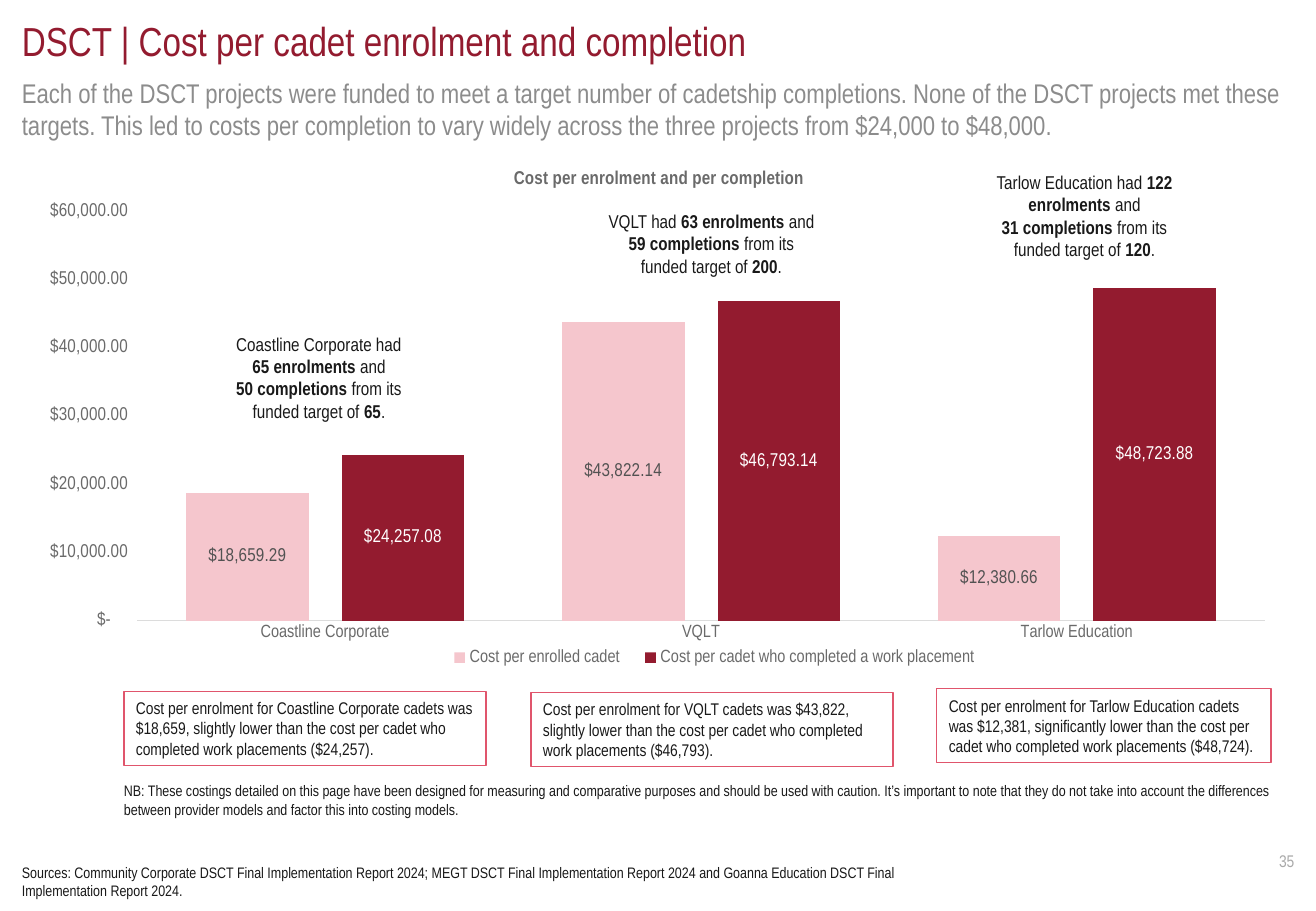
"""Build the slide on cost per cadet enrolment and completion."""
from lxml import etree
from pptx import Presentation
from pptx.chart.data import CategoryChartData
from pptx.dml.color import RGBColor
from pptx.enum.chart import XL_CHART_TYPE, XL_LABEL_POSITION, XL_LEGEND_POSITION, XL_TICK_MARK
from pptx.enum.shapes import MSO_SHAPE
from pptx.enum.text import MSO_ANCHOR, PP_ALIGN
from pptx.oxml.ns import qn
from pptx.util import Inches, Pt

COLUMNS = XL_CHART_TYPE.COLUMN_CLUSTERED
CENTRED_LABEL = XL_LABEL_POSITION.CENTER
LEGEND_BOTTOM = XL_LEGEND_POSITION.BOTTOM
NO_TICK = XL_TICK_MARK.NONE
RECTANGLE = MSO_SHAPE.RECTANGLE
TOP, MIDDLE = MSO_ANCHOR.TOP, MSO_ANCHOR.MIDDLE
LEFT, CENTER, RIGHT = PP_ALIGN.LEFT, PP_ALIGN.CENTER, PP_ALIGN.RIGHT

FONT = "Arial Narrow"
RED, PINK, BORDER = "931B2F", "F5C6CD", "E0556C"
INK, GREY, LABEL_GREY = "191919", "6A6A6A", "525252"
SUBTITLE_GREY, NUMBER_GREY, AXIS_GREY = "8C8C8C", "A9A9A9", "DCDCDC"
MONEY = '_("$"* #,##0.00_);_("$"* \\(#,##0.00\\);_("$"* "-"??_);_(@_)'
MARGIN, CONTENT_WIDTH = 0.18, 10.47
INDENT = 1.02


def style_font(font, size, color, bold=False):
    font.name, font.size, font.bold = FONT, Pt(size), bold
    font.color.rgb = RGBColor.from_string(color)


def write(shape, box, lines, size, color, align=LEFT, anchor=MIDDLE, insets=(0.1, 0.05)):
    """Place a shape and fill it; text between asterisks is bold."""
    shape.left, shape.top, shape.width, shape.height = map(Inches, box)
    frame = shape.text_frame
    frame.word_wrap = True
    frame.vertical_anchor = anchor
    frame.margin_left = frame.margin_right = Inches(insets[0])
    frame.margin_top = frame.margin_bottom = Inches(insets[1])
    for number, line in enumerate(lines):
        paragraph = frame.add_paragraph() if number else frame.paragraphs[0]
        paragraph.alignment = align
        paragraph.space_before = Pt(0)
        for part, text in enumerate(line.split("*")):
            if text:
                run = paragraph.add_run()
                run.text = text
                style_font(run.font, size, color, part % 2 == 1)


presentation = Presentation()
presentation.slide_width, presentation.slide_height = Inches(10.83), Inches(7.5)
slide = presentation.slides.add_slide(presentation.slide_layouts[1])
shapes = slide.shapes

write(shapes.title, (MARGIN, 0.13, CONTENT_WIDTH, 0.4),
      ["DSCT | Cost per cadet enrolment and completion"], 24, RED, anchor=TOP, insets=(0, 0))
subtitle = slide.placeholders[1]
properties = subtitle.text_frame.paragraphs[0]._p.get_or_add_pPr()
properties.set("marL", "0")
properties.set("indent", "0")
etree.SubElement(properties, qn("a:buNone"))
write(subtitle, (MARGIN, 0.63, CONTENT_WIDTH, 0.54),
      ["Each of the DSCT projects were funded to meet a target number of cadetship completions. "
       "None of the DSCT projects met these targets. This led to costs per completion to vary "
       "widely across the three projects from $24,000 to $48,000."],
      16, SUBTITLE_GREY, anchor=TOP, insets=(0, 0))

data = CategoryChartData(number_format=MONEY)
data.categories = ["Coastline Corporate", "VQLT", "Tarlow Education"]
data.add_series("Cost per enrolled cadet", (18659.29, 43822.14, 12380.66))
data.add_series("Cost per cadet who completed a work placement", (24257.08, 46793.14, 48723.88))
chart_width, chart_height = 10.45, 4.46
chart = shapes.add_chart(COLUMNS, Inches(MARGIN), Inches(1.21),
                         Inches(chart_width), Inches(chart_height), data).chart
style_font(chart.font, 11, INK)
chart.has_title = True
chart_title = chart.chart_title.text_frame
chart_title.text = "Cost per enrolment and per completion"
style_font(chart_title.paragraphs[0].runs[0].font, 11, GREY, True)
chart.has_legend = True
chart.legend.position = LEGEND_BOTTOM
chart.legend.include_in_layout = False
style_font(chart.legend.font, 10.5, GREY)

plot = chart.plots[0]
plot.gap_width, plot.overlap, plot.vary_by_categories = 80, -27, False
for series, fill, label_color in zip(plot.series, (PINK, RED), (LABEL_GREY, "FFFFFF")):
    series.format.fill.solid()
    series.format.fill.fore_color.rgb = RGBColor.from_string(fill)
    labels = series.data_labels
    labels.show_value = True
    labels.position = CENTRED_LABEL
    labels.number_format, labels.number_format_is_linked = MONEY, False
    style_font(labels.font, 11, label_color)

category_axis, value_axis = chart.category_axis, chart.value_axis
for axis, size in ((category_axis, 10.5), (value_axis, 11)):
    axis.major_tick_mark = axis.minor_tick_mark = NO_TICK
    axis.has_major_gridlines = False
    style_font(axis.tick_labels.font, size, GREY)
category_axis.format.line.color.rgb = RGBColor.from_string(AXIS_GREY)
category_axis.format.line.width = Pt(0.75)
value_axis.format.line.fill.background()
value_axis.minimum_scale, value_axis.maximum_scale, value_axis.major_unit = 0, 60000, 10000
value_axis.tick_labels.number_format = MONEY
value_axis.tick_labels.number_format_is_linked = False

chart_parts = [
    (chart._chartSpace.chart.plotArea, 0, (0.95, 0.53, 9.28, 3.37)),
    (chart.legend._element, 1, (3.4, 4.08, 4.6, 0.25)),
    (chart.chart_title._element, 1, (4.02, 0.15)),
]
for element, position, box in chart_parts:
    for old_layout in element.findall(qn("c:layout")):
        element.remove(old_layout)
    layout = etree.Element(qn("c:layout"))
    manual = etree.SubElement(layout, qn("c:manualLayout"))
    settings = [("layoutTarget", "inner")] if position == 0 else []
    settings += [("xMode", "edge"), ("yMode", "edge")]
    spans = (chart_width, chart_height) * 2
    settings += [(key, f"{length / span:.4f}") for key, length, span in zip("xywh", box, spans)]
    for key, value in settings:
        etree.SubElement(manual, qn(f"c:{key}")).set("val", value)
    element.insert(position, layout)

callouts = [
    (1.55, 2.69, 0.84, ["Coastline Corporate had", "*65 enrolments* and",
                        "*50 completions* from its", "funded target of *65*."]),
    (4.78, 1.68, 0.66, ["VQLT had *63 enrolments* and", "*59 completions* from its",
                        "funded target of *200*."]),
    (7.85, 1.36, 0.84, ["Tarlow Education had *122 enrolments* and",
                        "*31 completions* from its", "funded target of *120*."]),
]
for left, top, height, lines in callouts:
    write(shapes.add_textbox(0, 0, 0, 0), (left, top, 2.15, height), lines, 11, INK, CENTER, TOP)

findings = [
    (INDENT, 5.69, 2.98, "Coastline Corporate cadets was $18,659, slightly", "$24,257"),
    (4.37, 5.7, 2.98, "VQLT cadets was $43,822, slightly", "$46,793"),
    (7.71, 5.67, 2.75, "Tarlow Education cadets was $12,381, significantly", "$48,724"),
]
for left, top, width, finding, completion_cost in findings:
    box = shapes.add_shape(RECTANGLE, 0, 0, 0, 0)
    box.shadow.inherit = False
    box.fill.background()
    box.line.color.rgb = RGBColor.from_string(BORDER)
    box.line.width = Pt(0.75)
    write(box, (left, top, width, 0.61),
          [f"Cost per enrolment for {finding} lower than the cost per cadet "
           f"who completed work placements ({completion_cost})."], 10, INK)

notes = [
    (INDENT, 6.38, 9.44,
     "NB: These costings detailed on this page have been designed for measuring and comparative "
     "purposes and should be used with caution. It’s important to note that they do not take into "
     "account the differences between provider models and factor this into costing models."),
    (MARGIN, 7.05, 7.49,
     "Sources: Community Corporate DSCT Final Implementation Report 2024; MEGT DSCT Final "
     "Implementation Report 2024 and Goanna Education DSCT Final Implementation Report 2024."),
]
for left, top, width, note in notes:
    write(shapes.add_textbox(0, 0, 0, 0), (left, top, width, 0.41), [note], 9, INK,
          insets=(0, 0.05))
write(shapes.add_textbox(0, 0, 0, 0), (10.27, 6.89, 0.48, 0.4), ["35"], 10, NUMBER_GREY, RIGHT)

presentation.save("out.pptx")
